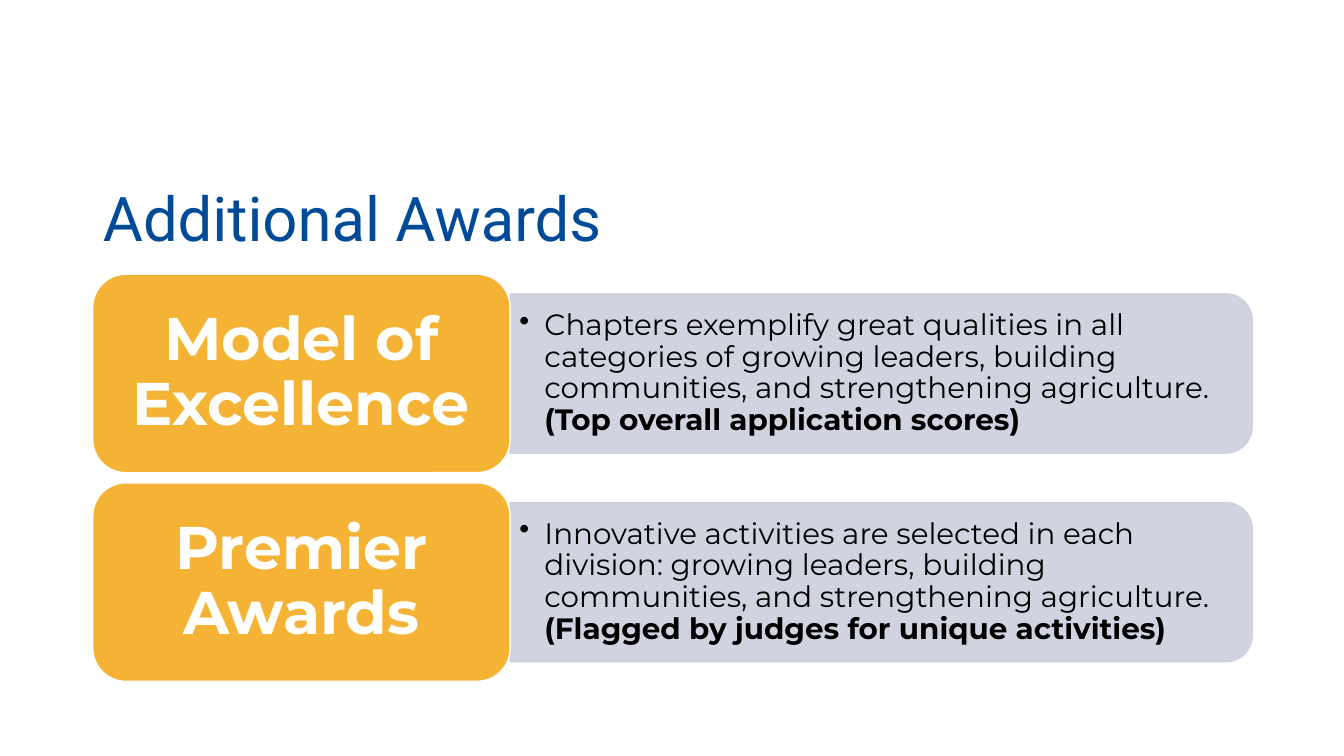
import pptx
import pptx.dml.color
import pptx.enum.shapes
import pptx.enum.text
import pptx.oxml
import pptx.oxml.ns
import pptx.util
from pptx.util import Inches

RGBColor = pptx.dml.color.RGBColor
Shape = pptx.enum.shapes.MSO_SHAPE
Align = pptx.enum.text.PP_ALIGN

BLUE = RGBColor(0x00, 0x4A, 0x98)
GOLD = RGBColor(0xF5, 0xB3, 0x35)
GREY = RGBColor(0xCC, 0xD0, 0xDD)
WHITE = RGBColor(0xFF, 0xFF, 0xFF)
BLACK = RGBColor(0x00, 0x00, 0x00)

LEFT = 0.92
LABEL_WIDTH, LABEL_HEIGHT = 4.14, 1.97
PANEL_WIDTH, PANEL_HEIGHT = 7.36, 1.58
PANEL_LEFT = LEFT + LABEL_WIDTH
FIRST_ROW, ROW_STEP = 2.72, 2.07

AWARDS = [
    ("Model of Excellence",
     "Chapters exemplify great qualities in all categories of growing leaders, "
     "building communities, and strengthening agriculture. ",
     "(Top overall application scores)"),
    ("Premier Awards",
     "Innovative activities are selected in each division: growing leaders, "
     "building communities, and strengthening agriculture. ",
     "(Flagged by judges for unique activities)"),
]


def style_span(span, font, size, color, bold=False):
    span.font.name = font
    span.font.size = pptx.util.Pt(size)
    span.font.color.rgb = color
    span.font.bold = bold


def set_frame(frame, side, top):
    frame.word_wrap = True
    frame.vertical_anchor = pptx.enum.text.MSO_ANCHOR.MIDDLE
    frame.margin_left = frame.margin_right = Inches(side)
    frame.margin_top = frame.margin_bottom = Inches(top)
    frame.paragraphs[0].line_spacing = 0.9


def add_plain_shape(page, kind, left, top, width, height, fill, line):
    shape = page.shapes.add_shape(
        kind, Inches(left), Inches(top), Inches(width), Inches(height))
    shape.shadow.inherit = False
    shape.fill.solid()
    shape.fill.fore_color.rgb = fill
    shape.line.color.rgb = line
    shape.line.width = pptx.util.Pt(1)
    return shape


def add_title(page, text):
    title = page.shapes.title
    title.left, title.top = Inches(LEFT), Inches(1.76)
    title.width, title.height = Inches(11.5), Inches(0.87)
    title.text_frame.text = text
    set_frame(title.text_frame, 0.1, 0.05)
    para = title.text_frame.paragraphs[0]
    para.alignment = Align.LEFT
    style_span(para.runs[0], "Roboto", 44, BLUE)


def add_panel(page, middle):
    left = PANEL_LEFT + (PANEL_WIDTH - PANEL_HEIGHT) / 2
    panel = add_plain_shape(
        page, Shape.ROUND_2_SAME_RECTANGLE, left, middle - PANEL_WIDTH / 2,
        PANEL_HEIGHT, PANEL_WIDTH, GREY, GREY)
    panel.rotation = 90
    for color in panel.element.spPr.iter(pptx.oxml.ns.qn("a:srgbClr")):
        alpha = color.makeelement(pptx.oxml.ns.qn("a:alpha"), {"val": "90000"})
        color.append(alpha)


def add_detail(page, middle, text, remark):
    height = 1.42
    box = page.shapes.add_textbox(
        Inches(PANEL_LEFT), Inches(middle - height / 2), Inches(7.28), Inches(height))
    set_frame(box.text_frame, 0.09, 0.04)
    para = box.text_frame.paragraphs[0]
    properties = para._p.get_or_add_pPr()
    properties.set("marL", str(Inches(0.25)))
    properties.set("indent", str(Inches(-0.25)))
    bullet = properties.makeelement(pptx.oxml.ns.qn("a:buChar"), {"char": "•"})
    properties.append(bullet)
    for words, bold in ((text, False), (remark, True)):
        span = para.add_run()
        span.text = words
        style_span(span, "Montserrat", 21, BLACK, bold)


def add_label(page, top, text):
    label = add_plain_shape(
        page, Shape.ROUNDED_RECTANGLE, LEFT, top, LABEL_WIDTH, LABEL_HEIGHT, GOLD, WHITE)
    label.text_frame.text = text
    set_frame(label.text_frame, 0.27, 0.18)
    para = label.text_frame.paragraphs[0]
    para.alignment = Align.CENTER
    style_span(para.runs[0], "Montserrat", 43, WHITE, True)


def main():
    deck = pptx.Presentation()
    deck.slide_width, deck.slide_height = Inches(13.33), Inches(7.5)
    page = deck.slides.add_slide(deck.slide_layouts[5])
    add_title(page, "Additional Awards")
    for row, (name, text, remark) in enumerate(AWARDS):
        top = FIRST_ROW + row * ROW_STEP
        middle = top + LABEL_HEIGHT / 2
        add_panel(page, middle)
        add_detail(page, middle, text, remark)
        add_label(page, top, name)
    deck.save("out.pptx")


if __name__ == "__main__":
    main()
